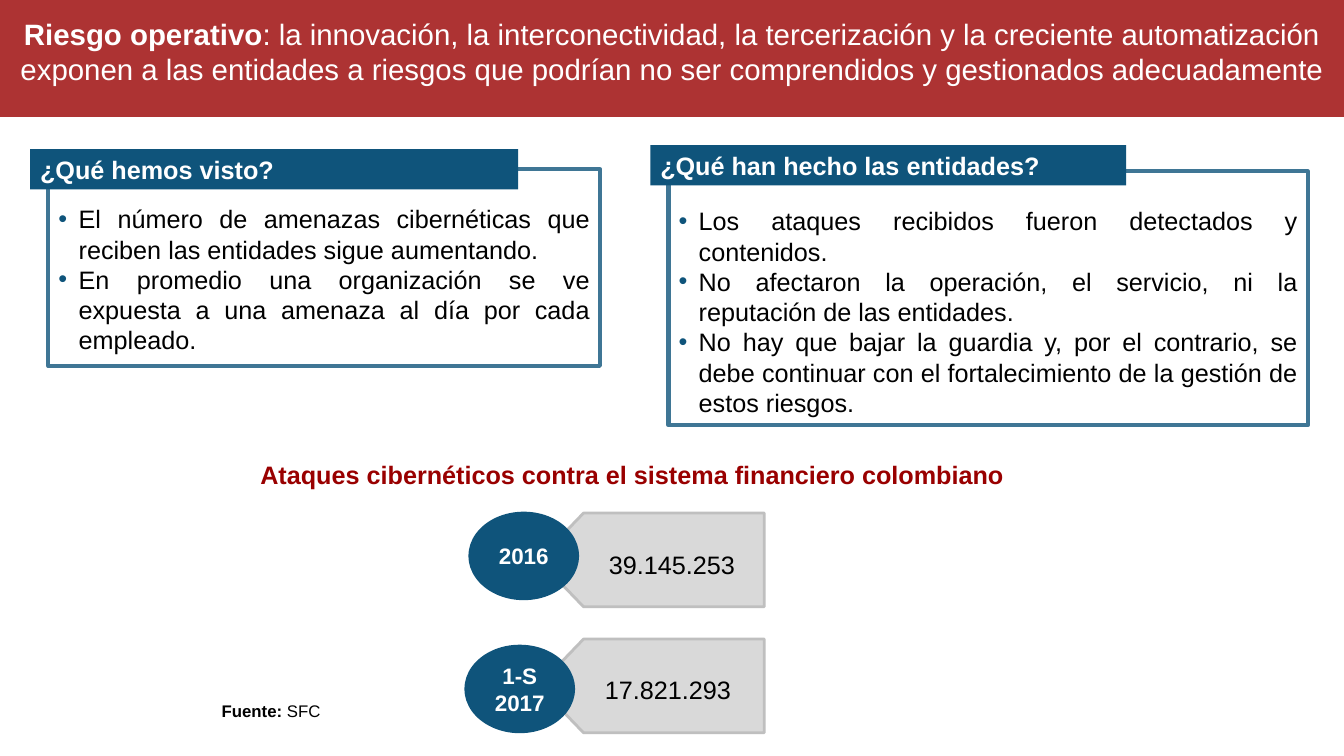
from dataclasses import dataclass

from lxml.etree import SubElement
from pptx import Presentation
from pptx.dml.color import RGBColor
from pptx.enum.shapes import MSO_SHAPE as Shape
from pptx.enum.text import MSO_ANCHOR as Anchor, MSO_AUTO_SIZE as AutoSize, PP_ALIGN as Align
from pptx.oxml.ns import qn
from pptx.util import Emu, Inches, Pt

CELL = Inches(0.1)  # the slide is a grid of 133.3 columns by 75 rows


@dataclass(frozen=True)
class Theme:
    font: str = "Arial"
    red: str = "AD3333"
    dark_red: str = "990000"
    blue: str = "0F547B"
    frame: str = "3F7695"
    grey: str = "D9D9D9"
    grey_edge: str = "BFBFBF"
    white: str = "FFFFFF"
    black: str = "000000"
    title_size: int = 21
    body_size: int = 18
    badge_size: int = 16
    source_size: int = 12


THEME = Theme()


def cells(count):
    return Emu(round(count * CELL))


def place(part, box):
    part.left, part.top, part.width, part.height = map(cells, box)


def paint(part, fill=None, line=None, width=2):
    if fill:
        part.fill.solid()
        part.fill.fore_color.rgb = RGBColor.from_string(fill)
    else:
        part.fill.background()
    if line:
        part.line.color.rgb = RGBColor.from_string(line)
        part.line.width = Pt(width)
    else:
        part.line.fill.background()


def add_block(slide, kind, box, fill, line=None):
    block = slide.shapes.add_shape(kind, *map(cells, box))
    block.shadow.inherit = False
    paint(block, fill, line)
    return block


def write(part, lines, size, color, align=Align.LEFT, anchor=Anchor.TOP, wrap=True, bullet=None):
    """Each line is a list of (text, bold) runs."""
    frame = part.text_frame
    frame.word_wrap = wrap
    frame.auto_size = AutoSize.NONE
    frame.vertical_anchor = anchor
    for number, runs in enumerate(lines):
        paragraph = frame.add_paragraph() if number else frame.paragraphs[0]
        if bullet:
            add_bullet(paragraph, bullet)
        paragraph.alignment = align
        paragraph.space_before = Pt(0)
        for text, bold in runs:
            run = paragraph.add_run()
            run.text = text
            run.font.name = THEME.font
            run.font.size = Pt(size)
            run.font.bold = bold
            run.font.color.rgb = RGBColor.from_string(color)


def add_bullet(paragraph, color):
    properties = paragraph._p.get_or_add_pPr()
    properties.set("marL", str(cells(2)))
    properties.set("indent", str(-cells(2)))
    bullet_color = SubElement(properties, qn("a:buClr"))
    SubElement(bullet_color, qn("a:srgbClr")).set("val", color)
    SubElement(properties, qn("a:buFont")).set("typeface", THEME.font)
    SubElement(properties, qn("a:buChar")).set("char", "•")


def add_label(slide, box, runs, size, color, **layout):
    label = slide.shapes.add_textbox(*map(cells, box))
    write(label, [runs], size, color, **layout)


def build_header(slide, box, runs):
    left, top, width, height = box
    band = add_block(slide, Shape.RECTANGLE, box, THEME.red)
    title = slide.shapes.title
    place(title, (left, top, width, height - 1.4))
    paint(title, THEME.red)
    write(title, [runs], THEME.title_size, THEME.white, Align.CENTER, Anchor.MIDDLE)
    title._element.addprevious(band._element)  # the band lies behind the title


def build_panel(slide, body, box, tab_rise, tab_width, heading, points):
    left, top, width, height = box
    # Framed list
    place(body, box)
    paint(body, line=THEME.frame, width=3)
    body.text_frame.margin_top = cells(3.4)
    write(body, [[(point, False)] for point in points], THEME.body_size, THEME.black,
          Align.JUSTIFY, bullet=THEME.blue)
    # Heading tab over the top left corner
    tab = add_block(slide, Shape.RECTANGLE, (left - 1.8, top - tab_rise, tab_width, 4), THEME.blue)
    write(tab, [[(heading, True)]], THEME.body_size, THEME.white)


def build_attack_row(slide, box, badge_at, count_at, period, count):
    left, top, width, height = box
    # Pointer, turned a quarter so that its tip faces left
    pointer_box = (left + (width - height) / 2, top + (height - width) / 2, height, width)
    pointer = add_block(slide, Shape.FLOWCHART_OFFPAGE_CONNECTOR, pointer_box,
                        THEME.grey, THEME.grey_edge)
    pointer.rotation = 90
    # Period badge
    badge = add_block(slide, Shape.OVAL, (left + badge_at[0], top + badge_at[1], 10.7, 8.5),
                      THEME.blue, THEME.blue)
    write(badge, [[(line, True)] for line in period], THEME.badge_size, THEME.white,
          Align.CENTER, Anchor.MIDDLE)
    # Number of attacks
    add_label(slide, (left + count_at[0], top + count_at[1], 15.3, 4), [(count, False)],
              THEME.body_size, THEME.black, wrap=False)


def build_attacks(slide, box):
    left, top, width, height = box
    add_label(slide, (left, top, width, 4),
              [("Ataques cibernéticos contra el sistema financiero colombiano", True)],
              THEME.body_size, THEME.dark_red, align=Align.CENTER)
    rows = [
        ((-6.8, 0), (6, 3.1), ["2016"], "39.145.253"),
        ((-7.2, 0.7), (5.6, 3), ["1-S", "2017"], "17.821.293"),
    ]
    for number, row in enumerate(rows):
        build_attack_row(slide, (left + 34.8, top + 5.8 + 12.5 * number, 22.4, 9.3), *row)
    add_label(slide, (left + 2.4, top + height - 3.6, 30, 3),
              [("Fuente: ", True), ("SFC", False)], THEME.source_size, THEME.black)


def main():
    deck = Presentation()
    deck.slide_width, deck.slide_height = Inches(13.33), Inches(7.5)
    slide = deck.slides.add_slide(deck.slide_layouts[3])
    seen, done = slide.placeholders[1], slide.placeholders[2]

    build_header(slide, (0, 0, 133.3, 11.6), [
        ("Riesgo operativo", True),
        (": la innovación, la interconectividad, la tercerización y la creciente automatización "
         "exponen a las entidades a riesgos que podrían no ser comprendidos y gestionados "
         "adecuadamente", False),
    ])
    build_panel(slide, seen, (4.8, 16.8, 54.7, 19.5), 2, 48.4, "¿Qué hemos visto?", [
        "El número de amenazas cibernéticas que reciben las entidades sigue aumentando.",
        "En promedio una organización se ve expuesta a una amenaza al día por cada empleado.",
    ])
    build_panel(slide, done, (66.3, 17, 63.4, 25.2), 2.6, 47.2, "¿Qué han hecho las entidades?", [
        "Los ataques recibidos fueron detectados y contenidos.",
        "No afectaron la operación, el servicio, ni la reputación de las entidades.",
        "No hay que bajar la guardia y, por el contrario, se debe continuar con el "
        "fortalecimiento de la gestión de estos riesgos.",
    ])
    build_attacks(slide, (18.6, 45.1, 88.2, 27.5))
    deck.save("out.pptx")


if __name__ == "__main__":
    main()
